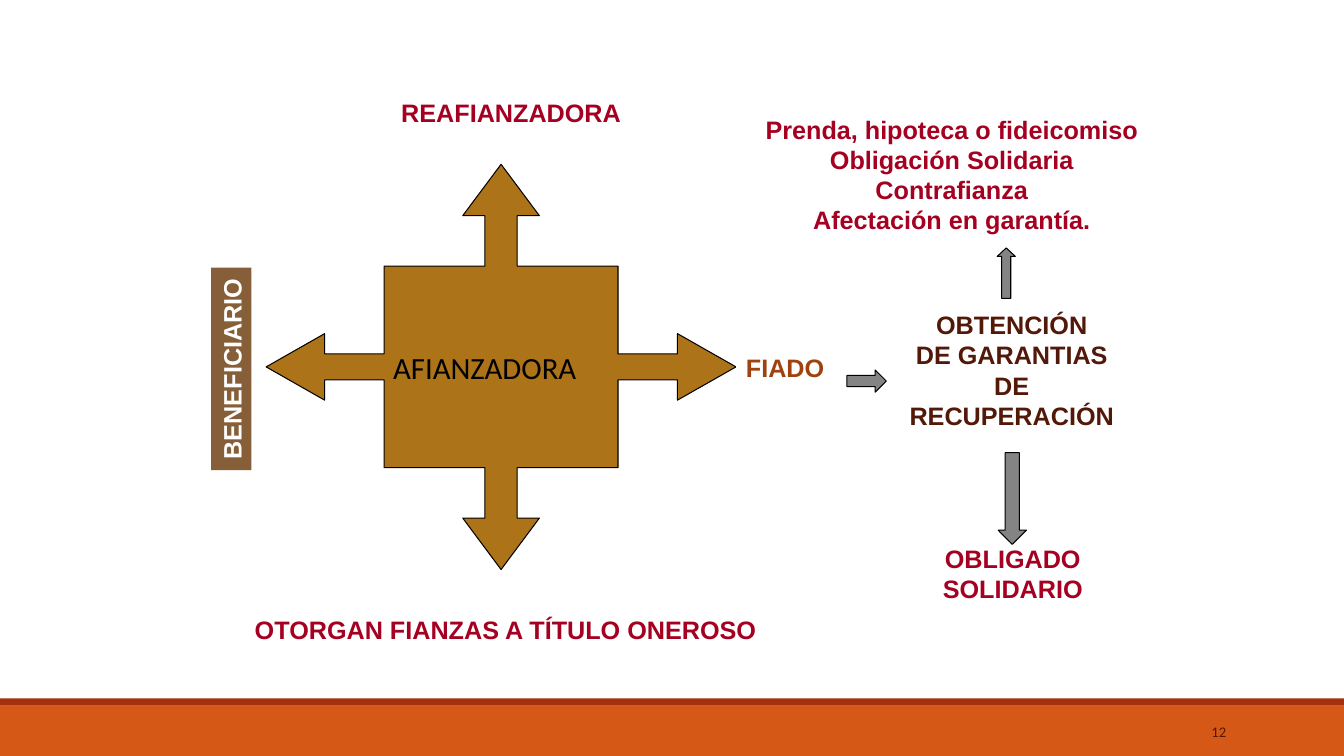
from pptx import Presentation
from pptx.dml.color import RGBColor
from pptx.enum import shapes, text
from pptx.util import Inches, Pt

COLORS = {
    "white": "FFFFFF", "black": "000000", "orange": "D55816", "rust": "A5300F",
    "brown": "865E37", "ochre": "AD7318", "grey": "848484",
    "crimson": "A50021", "copper": "A04210", "maroon": "521808",
}
LEFT, CENTER, RIGHT = text.PP_ALIGN.LEFT, text.PP_ALIGN.CENTER, text.PP_ALIGN.RIGHT
TOP, MIDDLE, BOTTOM = text.MSO_ANCHOR.TOP, text.MSO_ANCHOR.MIDDLE, text.MSO_ANCHOR.BOTTOM
SHAPE = shapes.MSO_SHAPE


def paint(sp, fill, line=None):
    sp.shadow.inherit = False
    sp.fill.solid()
    sp.fill.fore_color.rgb = RGBColor.from_string(COLORS[fill])
    if line:
        sp.line.color.rgb = RGBColor.from_string(COLORS[line])
        sp.line.width = Pt(0.75)
    else:
        sp.line.fill.background()


def write(sp, lines, color, align=CENTER, anchor=TOP, wrap=True,
          name="Arial", size=18, bold=True):
    tf = sp.text_frame
    tf.word_wrap = wrap
    tf.vertical_anchor = anchor
    for i, line in enumerate(lines):
        p = tf.paragraphs[0] if i == 0 else tf.add_paragraph()
        p.alignment = align
        r = p.add_run()
        r.text = line
        for key, value in {"name": name, "size": Pt(size), "bold": bold}.items():
            setattr(r.font, key, value)
        r.font.color.rgb = RGBColor.from_string(COLORS[color])


prs = Presentation()
prs.slide_width, prs.slide_height = Inches(13.33), Inches(7.5)
s = prs.slides.add_slide(prs.slide_layouts[6])

for top, height, fill in [(7, 0.5, "orange"), (6.93, 0.07, "rust")]:
    band = s.shapes.add_shape(SHAPE.RECTANGLE, 0, Inches(top),
                              prs.slide_width, Inches(height))
    paint(band, fill)

beneficiary = s.shapes.add_shape(SHAPE.RECTANGLE, Inches(1.29), Inches(3.46),
                                 Inches(2.01), Inches(0.4))
beneficiary.rotation = 270
paint(beneficiary, "brown")
write(beneficiary, ["BENEFICIARIO"], "white", anchor=BOTTOM, wrap=False)

cx, cy = 4.97, 3.64
quadrant = [(0, 2.01), (0.38, 1.5), (0.16, 1.5), (0.16, 1), (1.16, 1),
            (1.16, 0.13), (1.75, 0.13), (1.75, 0.33), (2.33, 0)]
right_half = quadrant + [(x, -y) for x, y in quadrant[-2::-1]]
outline = right_half + [(-x, y) for x, y in right_half[-2:0:-1]]
points = [(Inches(cx + x), Inches(cy - y)) for x, y in outline]
builder = s.shapes.build_freeform(*points[0])
builder.add_line_segments(points[1:], close=True)
guarantor = builder.convert_to_shape()
paint(guarantor, "ochre", "black")
guarantor.text_frame.margin_left = Inches(1.26)
write(guarantor, ["AFIANZADORA"], "black", LEFT, MIDDLE,
      name="Calibri", size=22, bold=False)

labels = [
    (3.87, 0.92, 2.4, 0.4, ["REAFIANZADORA"], "crimson", CENTER, False),
    (2.4, 6.05, 5.23, 0.4, ["OTORGAN FIANZAS A TÍTULO ONEROSO"], "crimson", CENTER, False),
    (7.3, 3.45, 0.99, 0.4, ["FIADO"], "copper", LEFT, False),
    (8.87, 3.02, 2.33, 1.31, ["OBTENCIÓN", "DE GARANTIAS", "DE RECUPERACIÓN"],
     "maroon", CENTER, True),
    (7.48, 1.08, 3.92, 1.31,
     ["Prenda, hipoteca o fideicomiso", "Obligación Solidaria",
      "Contrafianza", "Afectación en garantía."], "crimson", CENTER, True),
    (9.25, 5.34, 1.59, 0.71, ["OBLIGADO", "SOLIDARIO"], "crimson", CENTER, False),
]
for left, top, width, height, lines, color, align, wrap in labels:
    label = s.shapes.add_shape(SHAPE.RECTANGLE, Inches(left), Inches(top),
                               Inches(width), Inches(height))
    paint(label, "white")
    write(label, lines, color, align, wrap=wrap)

arrows = [
    (SHAPE.RIGHT_ARROW, 8.4, 3.67, 0.39, 0.22, 0.5),
    (SHAPE.UP_ARROW, 9.89, 2.46, 0.18, 0.5, 0.47),
    (SHAPE.DOWN_ARROW, 9.9, 4.49, 0.28, 0.91, 0.5),
]
for kind, left, top, width, height, head in arrows:
    arrow = s.shapes.add_shape(kind, Inches(left), Inches(top),
                               Inches(width), Inches(height))
    arrow.adjustments[0], arrow.adjustments[1] = 0.5, head
    paint(arrow, "grey", "black")

number = s.shapes.add_textbox(Inches(10.83), Inches(7.06), Inches(1.43), Inches(0.4))
write(number, ["12"], "maroon", RIGHT, MIDDLE, name="Calibri", size=10.5, bold=False)

prs.save("out.pptx")
